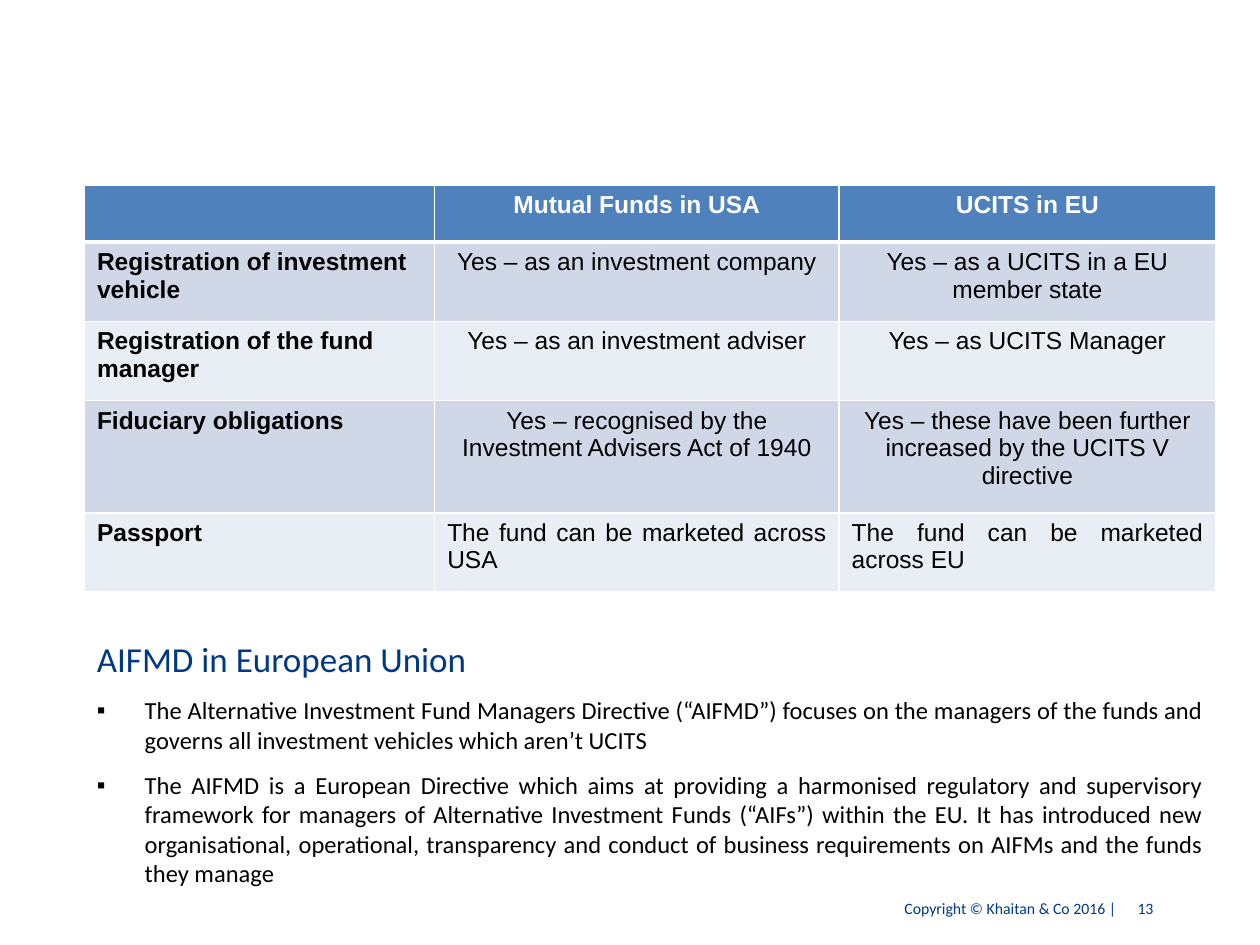
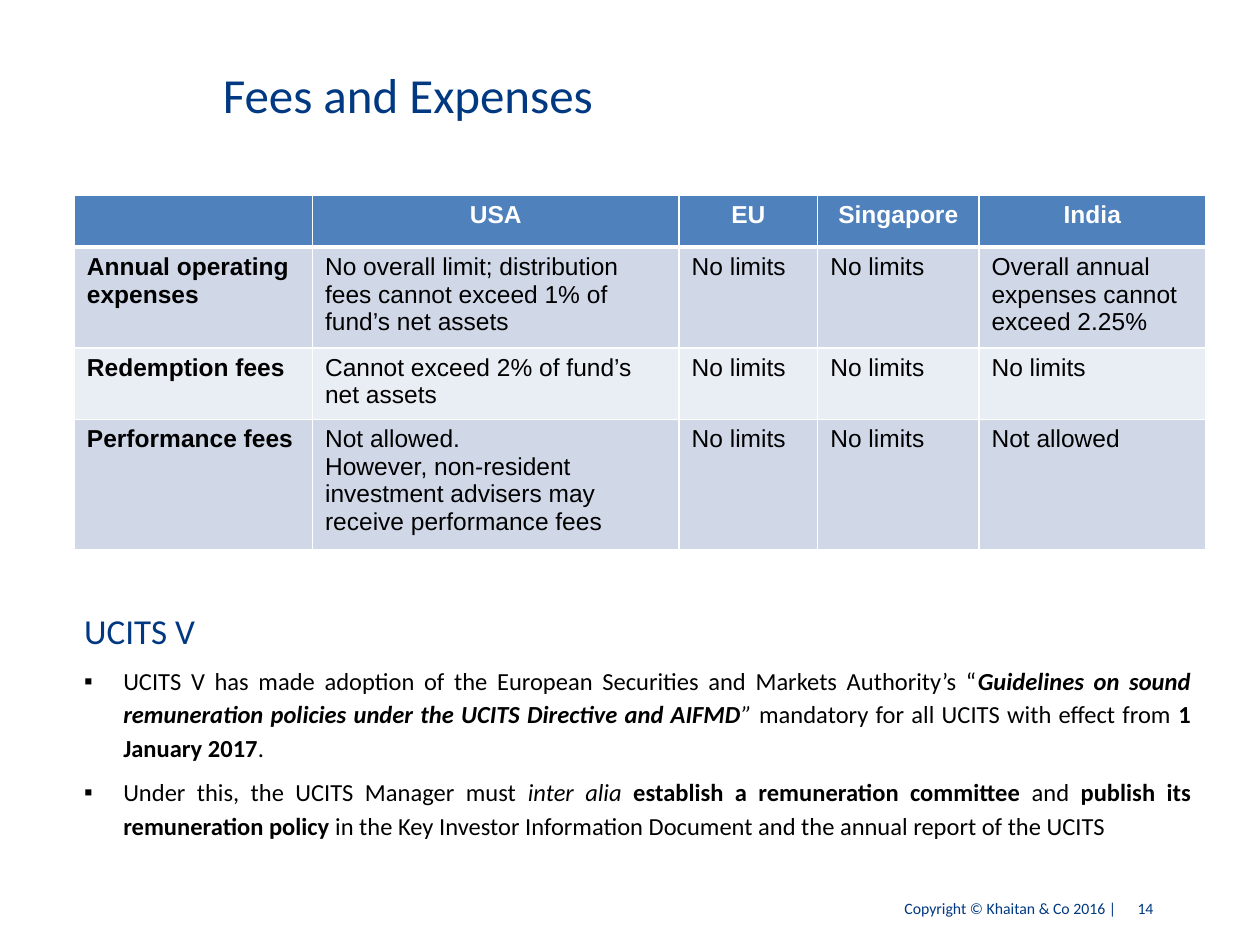
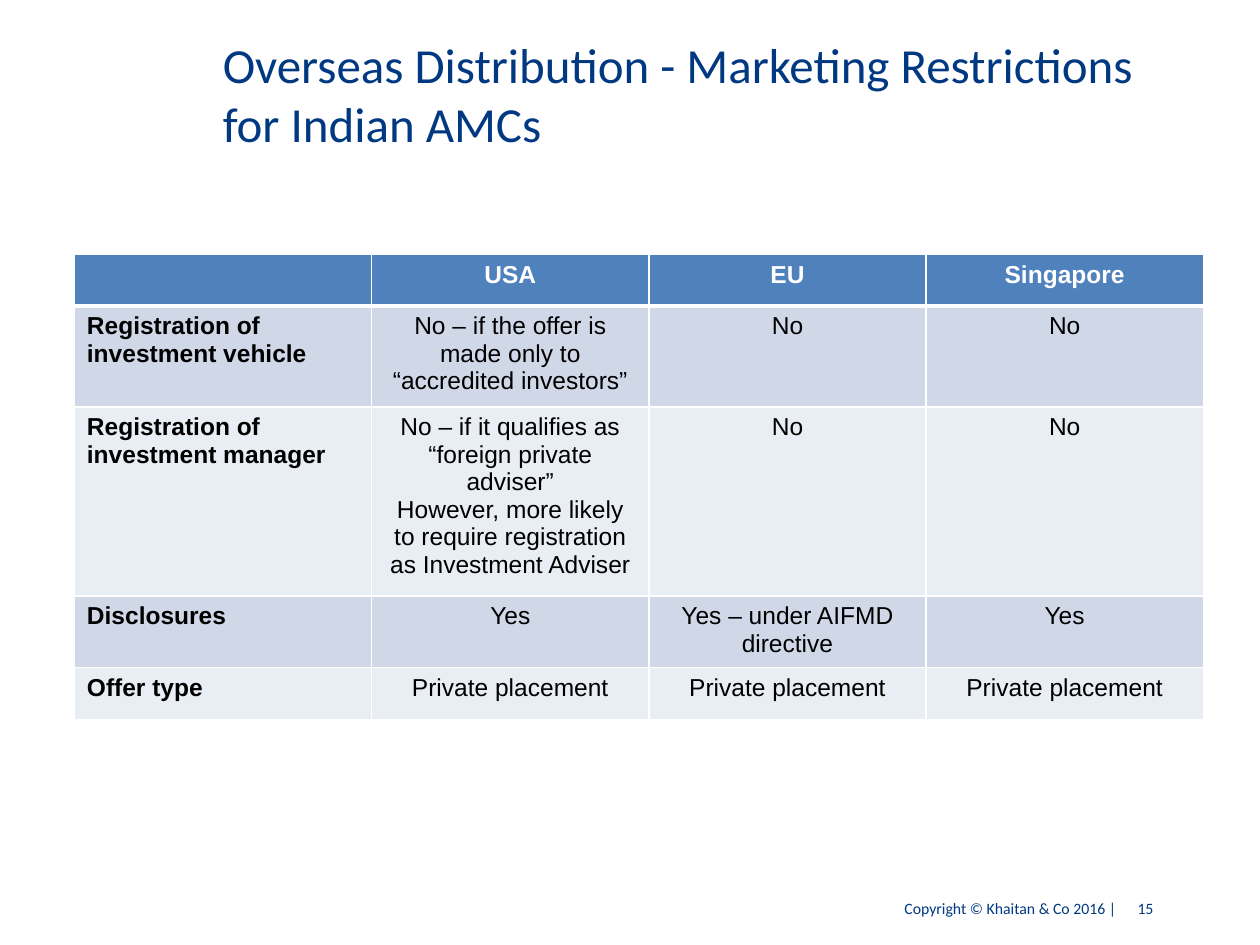
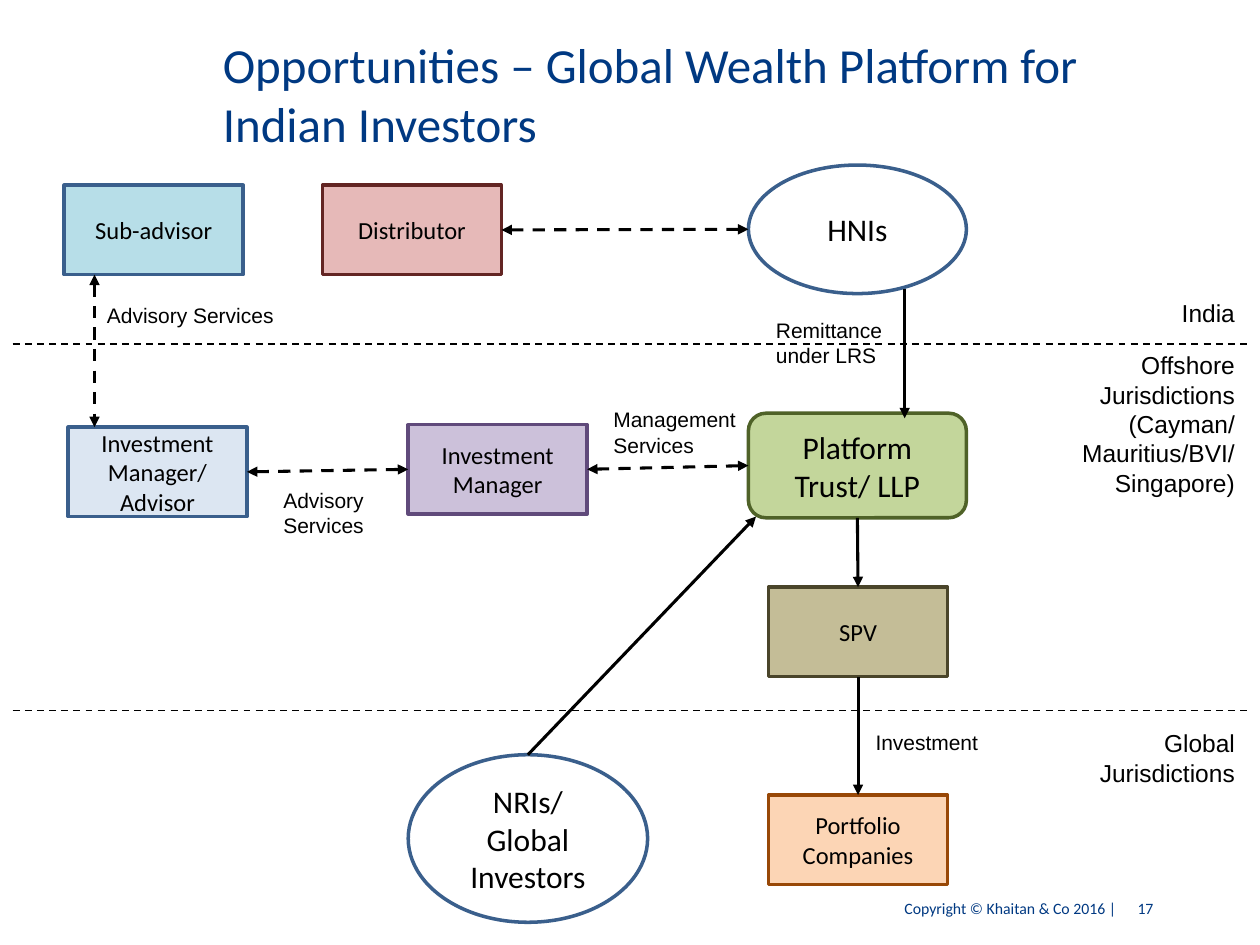
from lxml import etree
from pptx import Presentation
from pptx import util as u
from pptx.dml.color import RGBColor
from pptx.enum import dml, shapes, text
from pptx.oxml import ns

WIDTH, HEIGHT = u.Inches(10), u.Inches(7.5)
COLUMN, ROW = WIDTH / 100, HEIGHT / 75

NAVY = RGBColor(0x00, 0x39, 0x82)
BLACK = RGBColor(0x00, 0x00, 0x00)
WHITE = RGBColor(0xFF, 0xFF, 0xFF)
HEADER_BLUE = RGBColor(0x4F, 0x81, 0xBD)
BAND_DARK = RGBColor(0xD0, 0xD8, 0xE8)
BAND_LIGHT = RGBColor(0xE9, 0xED, 0xF4)
STEEL = RGBColor(0x3A, 0x5F, 0x8C)
AQUA = RGBColor(0xB7, 0xDE, 0xE8)
ROSE = RGBColor(0xE6, 0xB9, 0xB8)
MAROON = RGBColor(0x63, 0x25, 0x23)
ICE = RGBColor(0xDC, 0xE6, 0xF2)
LILAC = RGBColor(0xCC, 0xC1, 0xDA)
PURPLE = RGBColor(0x60, 0x4A, 0x7B)
TAN = RGBColor(0xC4, 0xBD, 0x97)
UMBER = RGBColor(0x4A, 0x45, 0x2A)
PEACH = RGBColor(0xFC, 0xD5, 0xB5)
RUST = RGBColor(0x98, 0x48, 0x07)
LEAF = RGBColor(0xC3, 0xD6, 0x9B)
FOREST = RGBColor(0x4F, 0x62, 0x28)

LEFT, CENTER, RIGHT, JUSTIFY = (
    text.PP_ALIGN.LEFT, text.PP_ALIGN.CENTER, text.PP_ALIGN.RIGHT, text.PP_ALIGN.JUSTIFY)
MIDDLE, TOP = text.MSO_ANCHOR.MIDDLE, text.MSO_ANCHOR.TOP
BOX, OVAL, ROUNDED = (
    shapes.MSO_SHAPE.RECTANGLE, shapes.MSO_SHAPE.OVAL, shapes.MSO_SHAPE.ROUNDED_RECTANGLE)
SITE_TOP, SITE_LEFT, SITE_BOTTOM, SITE_RIGHT = range(4)
BOLD, ITALIC = {"bold": True}, {"italic": True}


def across(columns):
    return u.Emu(round(columns * COLUMN))


def down(rows):
    return u.Emu(round(rows * ROW))


def place(left, top, width, height):
    return across(left), down(top), across(width), down(height)


def add_xml(parent, tag, **attributes):
    return etree.SubElement(parent, ns.qn(tag), attributes)


def set_values(target, values):
    for name, value in values.items():
        setattr(target, name, value)


def write(paragraph, runs, size, color=BLACK, font="Calibri", **values):
    for words, extra in [(runs, {})] if isinstance(runs, str) else runs:
        run = paragraph.add_run()
        run.text = words
        set_values(run.font, {"name": font, "size": u.Pt(size), **values, **extra})
        run.font.color.rgb = color


def fill_frame(frame, lines, size, align=LEFT, **values):
    for index, line in enumerate(lines.split("\n")):
        paragraph = frame.add_paragraph() if index else frame.paragraphs[0]
        paragraph.alignment = align
        write(paragraph, line, size, **values)


def add_frame(slide, area, anchor=TOP):
    frame = slide.shapes.add_textbox(*place(*area)).text_frame
    set_values(frame, {"word_wrap": True, "vertical_anchor": anchor})
    return frame


def add_title(slide, title):
    fill_frame(add_frame(slide, (16.7, 3.3, 77.5, 8.3), MIDDLE), title, 28, color=NAVY)


def add_footer(slide, number):
    paragraph = add_frame(slide, (18.3, 70.8, 81.7, 2.5)).paragraphs[0]
    tabs = add_xml(paragraph._p.get_or_add_pPr(), "a:tabLst")
    for stop in (52.5, 71):
        add_xml(tabs, "a:tab", pos=str(across(stop)), algn="l")
    write(paragraph, f"\tCopyright © Khaitan & Co 2016 |\t{number}", 9, NAVY)


def add_section(slide, area, heading, bullets, indent, spacing):
    frame = add_frame(slide, area)
    for index, runs in enumerate([heading, *bullets]):
        paragraph = frame.add_paragraph() if index else frame.paragraphs[0]
        if index:
            properties = paragraph._p.get_or_add_pPr()
            properties.set("marL", str(across(indent)))
            properties.set("indent", str(-across(indent)))
            add_xml(properties, "a:buFont", typeface="Arial")
            add_xml(properties, "a:buChar", char="▪")
        set_values(paragraph, {"alignment": JUSTIFY, **spacing})
        if index:
            write(paragraph, runs, 14)
        else:
            paragraph.space_before = u.Pt(0)
            write(paragraph, runs, 20, NAVY)


def add_border(cell, side, points):
    line = add_xml(cell._tc.get_or_add_tcPr(), f"a:ln{side}", w=str(u.Pt(points)))
    add_xml(add_xml(line, "a:solidFill"), "a:srgbClr", val=str(WHITE))


def add_grid(slide, left, top, widths, heights, rows, body_align, last_align=None):
    area = place(left, top, sum(widths), sum(heights))
    table = slide.shapes.add_table(len(rows), len(widths), *area).table
    for column, width in zip(table.columns, widths):
        column.width = across(width)
    for row, height in zip(table.rows, heights):
        row.height = down(height)
    for r, cells in enumerate(rows):
        body = last_align if last_align and r == len(rows) - 1 else body_align
        for c, words in enumerate(cells):
            cell = table.cell(r, c)
            for side, points in {"L": 1, "R": 1, "T": 3 if r == 1 else 1,
                                 "B": 1 if r else 3}.items():
                add_border(cell, side, points)
            cell.fill.solid()
            cell.fill.fore_color.rgb = (BAND_DARK if r % 2 else BAND_LIGHT) if r else HEADER_BLUE
            if words:
                align = CENTER if r == 0 else body if c else LEFT
                fill_frame(cell.text_frame, words, 14, align, font="Arial",
                           color=BLACK if r else WHITE, bold=r == 0 or c == 0)


def add_node(slide, kind, area, words, size, fill, outline):
    shape = slide.shapes.add_shape(kind, *place(*area))
    shape.shadow.inherit = False
    if fill is None:
        shape.fill.background()
    else:
        shape.fill.solid()
        shape.fill.fore_color.rgb = fill
    shape.line.color.rgb = outline
    shape.line.width = u.Pt(2)
    set_values(shape.text_frame, {"word_wrap": True, "vertical_anchor": MIDDLE})
    fill_frame(shape.text_frame, words, size, CENTER)
    return shape


def add_link(slide, nodes, start, end, weight=1.75, dashed=False, arrows=("tail",)):
    points = [(0, 0) if isinstance(point[0], str) else (across(point[0]), down(point[1]))
              for point in (start, end)]
    link = slide.shapes.add_connector(shapes.MSO_CONNECTOR.STRAIGHT, *points[0], *points[1])
    for point, connect in ((start, link.begin_connect), (end, link.end_connect)):
        if isinstance(point[0], str):
            connect(nodes[point[0]], point[1])
    link.line.color.rgb = BLACK
    link.line.width = u.Pt(weight)
    if dashed:
        link.line.dash_style = dml.MSO_LINE.DASH
    for arrow in arrows:
        add_xml(link.line._get_or_add_ln(), f"a:{arrow}End", type="triangle")
    add_xml(link._element.spPr, "a:effectLst")


def add_fund_comparison(slide):
    add_grid(slide, 6.7, 14.7, [27.8, 32.1, 29.9], [4.5, 6.3, 6.3, 8.9, 6.3], [
        ["", "Mutual Funds in USA", "UCITS in EU"],
        ["Registration of investment vehicle", "Yes – as an investment company",
         "Yes – as a UCITS in a EU member state"],
        ["Registration of the fund manager", "Yes – as an investment adviser",
         "Yes – as UCITS Manager"],
        ["Fiduciary obligations", "Yes – recognised by the Investment Advisers Act of 1940",
         "Yes – these have been further increased by the UCITS V directive"],
        ["Passport", "The fund can be marketed across USA", "The fund can be marketed across EU"],
    ], CENTER, JUSTIFY)
    add_section(slide, (6.7, 50.1, 89.8, 23.6), "AIFMD in European Union", [
        "The Alternative Investment Fund Managers Directive (“AIFMD”) focuses on the managers "
        "of the funds and governs all investment vehicles which aren’t UCITS",
        "The AIFMD is a European Directive which aims at providing a harmonised regulatory and "
        "supervisory framework for managers of Alternative Investment Funds (“AIFs”) within the "
        "EU. It has introduced new organisational, operational, transparency and conduct of "
        "business requirements on AIFMs and the funds they manage",
    ], 3.8, {"space_before": u.Pt(3), "space_after": u.Pt(6)})


def add_fees(slide):
    add_title(slide, "Fees and Expenses")
    add_grid(slide, 5.9, 15.5, [18.9, 29.1, 11, 12.8, 18], [4.1, 7.6, 5.4, 9.7], [
        ["", "USA", "EU", "Singapore", "India"],
        ["Annual operating expenses",
         "No overall limit; distribution fees cannot exceed 1% of fund’s net assets",
         "No limits", "No limits", "Overall annual expenses cannot exceed 2.25%"],
        ["Redemption fees", "Cannot exceed 2% of fund’s net assets",
         "No limits", "No limits", "No limits"],
        ["Performance fees",
         "Not allowed.\nHowever, non-resident investment advisers may receive performance fees",
         "No limits", "No limits", "Not allowed"],
    ], LEFT)
    add_section(slide, (5.7, 47.4, 89.8, 24.7), "UCITS V", [
        [("UCITS V has made adoption of the European Securities and Markets Authority’s “", {}),
         ("Guidelines on sound remuneration policies under the UCITS Directive and AIFMD",
          {**BOLD, **ITALIC}),
         ("” ", ITALIC),
         ("mandatory for all UCITS with effect from ", {}),
         ("1 January 2017", BOLD),
         (".", {})],
        [("Under this, the UCITS Manager must ", {}),
         ("inter alia ", ITALIC),
         ("establish a remuneration committee ", BOLD),
         ("and ", {}),
         ("publish its remuneration policy ", BOLD),
         ("in the Key Investor Information Document and the annual report of the UCITS", {})],
    ], 3.1, {"space_before": u.Pt(6), "line_spacing": 1.14})


def add_marketing(slide):
    add_title(slide, "Overseas Distribution - Marketing Restrictions for Indian AMCs")
    add_grid(slide, 5.9, 20.2, [23.6] + [22] * 3, [4.1, 7.6, 14.1, 5.4, 4.1], [
        ["", "USA", "EU", "Singapore"],
        ["Registration of investment vehicle",
         "No – if the offer is made only to “accredited investors”", "No", "No"],
        ["Registration of investment manager",
         "No – if it qualifies as “foreign private adviser”\n"
         "However, more likely to require registration as Investment Adviser", "No", "No"],
        ["Disclosures", "Yes", "Yes – under AIFMD directive", "Yes"],
        ["Offer type"] + ["Private placement"] * 3,
    ], CENTER)


def add_platform(slide):
    add_title(slide, "Opportunities – Global Wealth Platform for Indian Investors")
    nodes = {}
    for name, left, top, words, fill, outline in (
            ("sub-advisor", 5.1, 14.7, "Sub-advisor", AQUA, STEEL),
            ("distributor", 25.6, 14.7, "Distributor", ROSE, MAROON),
            ("advisor", 5.4, 33.9, "Investment Manager/ Advisor", ICE, STEEL),
            ("manager", 32.4, 33.7, "Investment Manager", LILAC, PURPLE),
            ("spv", 61, 46.6, "SPV", TAN, UMBER),
            ("portfolio", 61, 63.1, "Portfolio Companies", PEACH, RUST)):
        nodes[name] = add_node(slide, BOX, (left, top, 14.2, 7.1), words, 14, fill, outline)
    for name, kind, area, words, fill, outline in (
            ("hnis", OVAL, (59.4, 13.1, 17.3, 10.2), "HNIs", None, STEEL),
            ("nris", OVAL, (32.4, 59.9, 19, 13.3), "NRIs/ Global Investors", None, STEEL),
            ("platform", ROUNDED, (59.4, 32.8, 17.3, 8.3), "Platform\nTrust/ LLP", LEAF, FOREST)):
        nodes[name] = add_node(slide, kind, area, words, 18, fill, outline)

    for border in (27.3, 56.4):
        add_link(slide, nodes, (1, border), (99, border), 1, True, ())
    for start, end in (
            ((71.8, 22.9), (71.8, 33.2)),
            (("platform", SITE_BOTTOM), ("spv", SITE_TOP)),
            (("spv", SITE_BOTTOM), ("portfolio", SITE_TOP)),
            (("nris", SITE_TOP), (60, 41))):
        add_link(slide, nodes, start, end)
    for start, end in (
            ((59.4, 18.2), ("distributor", SITE_RIGHT)),
            ((7.5, 21.8), (7.5, 33.9)),
            (("advisor", SITE_RIGHT), ("manager", SITE_LEFT)),
            (("manager", SITE_RIGHT), ("platform", SITE_LEFT))):
        add_link(slide, nodes, start, end, dashed=True, arrows=("head", "tail"))

    for top, height, words in (
            (23.2, 3.4, "India"),
            (27.3, 10.4, "Offshore Jurisdictions\n(Cayman/Mauritius/BVI/Singapore)"),
            (57.3, 5.7, "Global Jurisdictions")):
        fill_frame(add_frame(slide, (80.7, top, 18.3, height)), words, 14, RIGHT, font="Arial")
    for area, words in (
            ((60.6, 24.7, 15.1, 5), "Remittance under LRS"),
            ((7.5, 23.5, 16.5, 3), "Advisory Services"),
            ((21.5, 38.2, 16.5, 5), "Advisory\nServices"),
            ((47.7, 31.8, 19.7, 5), "Management\nServices"),
            ((68.5, 57.4, 16.5, 3), "Investment")):
        fill_frame(add_frame(slide, area), words, 12, font="Arial")


def main():
    presentation = Presentation()
    set_values(presentation, {"slide_width": WIDTH, "slide_height": HEIGHT})
    for number, add_content in ((13, add_fund_comparison), (14, add_fees),
                                (15, add_marketing), (17, add_platform)):
        slide = presentation.slides.add_slide(presentation.slide_layouts[6])
        add_footer(slide, number)
        add_content(slide)
    presentation.save("out.pptx")


if __name__ == "__main__":
    main()
